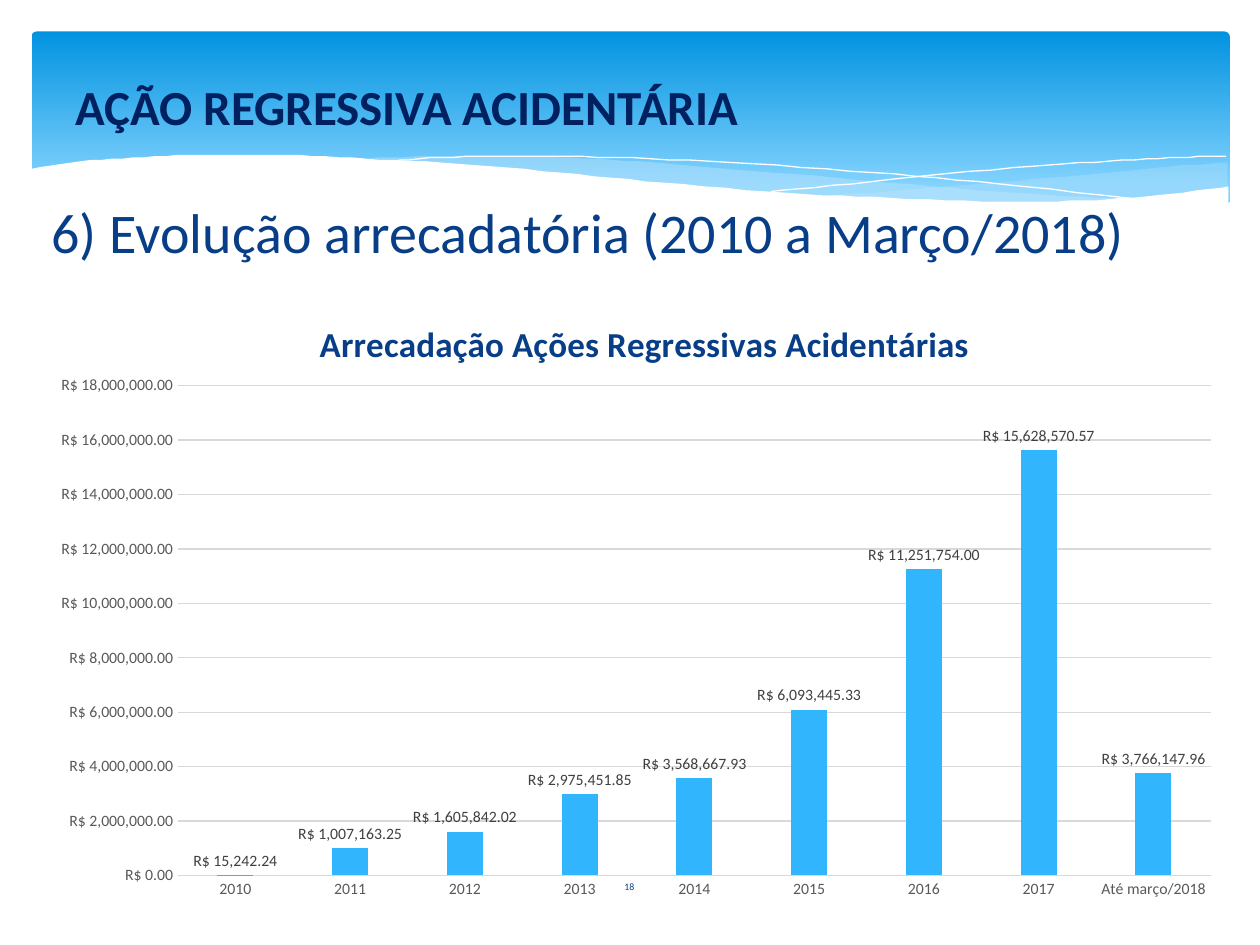
from lxml.etree import SubElement
from pptx import Presentation
from pptx.chart.data import CategoryChartData
from pptx.dml.color import RGBColor
from pptx.enum.chart import XL_CHART_TYPE, XL_LABEL_POSITION, XL_TICK_MARK
from pptx.enum.shapes import MSO_SHAPE
from pptx.enum.text import MSO_ANCHOR, PP_ALIGN
from pptx.oxml import parse_xml
from pptx.oxml.ns import nsdecls, qn
from pptx.util import Pt

PX = 9144  # 100 px to the inch
FONT = "Calibri"
WHITE = RGBColor(0xFF, 0xFF, 0xFF)
SKY_DARK = RGBColor(0x02, 0x93, 0xE0)
SKY_LIGHT = RGBColor(0x83, 0xD3, 0xFE)
MIST = RGBColor(0xC6, 0xE7, 0xFC)
NAVY = RGBColor(0x00, 0x20, 0x60)
BLUE = RGBColor(0x07, 0x3E, 0x87)
BAR = RGBColor(0x31, 0xB6, 0xFD)
GRID = RGBColor(0xD9, 0xD9, 0xD9)
AXIS_TEXT = RGBColor(0x59, 0x59, 0x59)
LABEL_TEXT = RGBColor(0x40, 0x40, 0x40)

TITLE = "AÇÃO REGRESSIVA ACIDENTÁRIA"
HEADING = "6) Evolução arrecadatória (2010 a Março/2018)"
CHART_TITLE = "Arrecadação Ações Regressivas Acidentárias"
PAGE = "18"
MONEY = '"R$"\\ #,##0.00'
REVENUE = [
    ("2010", 15242.24), ("2011", 1007163.25), ("2012", 1605842.02),
    ("2013", 2975451.85), ("2014", 3568667.93), ("2015", 6093445.33),
    ("2016", 11251754.00), ("2017", 15628570.57), ("Até março/2018", 3766147.96),
]

# Each wave is a list of curves, joined by straight edges.
RIGHT_WAVE = [
    [(974, 129), (919, 133), (859, 139), (777, 146), (704, 152), (659, 155)],
    [(659, 155), (717, 158), (779, 160), (842, 160), (895, 157), (934, 154), (974, 148)],
]
LEFT_WAVE = [
    [(891, 158), (835, 155), (740, 148), (627, 138), (553, 132), (487, 127),
     (418, 124), (342, 124), (285, 126)],
    [(285, 126), (360, 131), (448, 138), (528, 146), (616, 153), (693, 157),
     (771, 160), (836, 161), (891, 158)],
]
FALLING_LINE = [[(307, 128), (351, 125), (414, 124), (487, 125), (580, 129),
                 (693, 137), (793, 146), (905, 158)]]
RISING_LINE = [[(612, 152), (693, 144), (804, 133), (879, 128), (936, 125), (973, 124)]]
WHITE_WAVE = [
    [(975, 148), (918, 155), (861, 159), (792, 160), (706, 157), (624, 153),
     (527, 145), (445, 137), (363, 130), (291, 126), (228, 123), (159, 123),
     (105, 125), (57, 129), (21, 135)],
    [(21, 181), (975, 181)],
]


def smooth(knots, steps=6):
    """Points of a Catmull-Rom curve through the knots."""
    ends = [knots[0], *knots, knots[-1]]
    points = [knots[0]]
    for a, b, c, d in zip(ends, ends[1:], ends[2:], ends[3:]):
        for i in range(1, steps + 1):
            t = i / steps
            points.append(tuple(
                (2 * q + (r - p) * t + (2 * p - 5 * q + 4 * r - u) * t ** 2
                 + (3 * q - p - 3 * r + u) * t ** 3) / 2
                for p, q, r, u in zip(a, b, c, d)))
    return points


def add_wave(s, curves, fill=None, alpha=100, line=None):
    points = [pt for curve in curves for pt in smooth(curve)]
    builder = s.shapes.build_freeform(*points[0], scale=PX)
    builder.add_line_segments(points[1:], close=fill is not None)
    sp = builder.convert_to_shape()
    sp.shadow.inherit = False
    if fill is None:
        sp.fill.background()
    else:
        sp.fill.solid()
        sp.fill.fore_color.rgb = fill
        if alpha < 100:
            color = sp._element.spPr.find(qn("a:solidFill"))[0]
            SubElement(color, qn("a:alpha"), val=str(alpha * 1000))
    if line is None:
        sp.line.fill.background()
    else:
        sp.line.color.rgb = line
        sp.line.width = Pt(0)


def style(font, size, color, bold=False):
    font.name, font.size, font.bold = FONT, Pt(size), bold
    font.color.rgb = color


def place(sp, x, y, w, h):
    sp.left, sp.top, sp.width, sp.height = (v * PX for v in (x, y, w, h))


def write(sp, text, size, color, bold=False, align=PP_ALIGN.LEFT, anchor=MSO_ANCHOR.TOP):
    tf = sp.text_frame
    tf.word_wrap = True
    tf.vertical_anchor = anchor
    p = tf.paragraphs[0]
    p.alignment = align
    r = p.add_run()
    r.text = text
    style(r.font, size, color, bold)
    return p


def set_layout(parent, index, target="", **fractions):
    """Give a chart part a fixed place, in fractions of the chart."""
    old = parent.find(qn("c:layout"))
    if old is not None:
        parent.remove(old)
    inner = f'<c:layoutTarget val="{target}"/>' if target else ""
    inner += "".join(f'<c:{k}Mode val="edge"/>' for k in "xy")
    inner += "".join(f'<c:{k} val="{v}"/>' for k, v in fractions.items())
    parent.insert(index, parse_xml(
        f'<c:layout {nsdecls("c")}><c:manualLayout>{inner}</c:manualLayout></c:layout>'))


def add_banner(s):
    sp = s.shapes.add_shape(MSO_SHAPE.ROUNDED_RECTANGLE, 25 * PX, 25 * PX, 951 * PX, 137 * PX)
    sp.adjustments[0] = 0.03
    sp.shadow.inherit = False
    sp.line.fill.background()
    sp.fill.gradient()
    sp.fill.gradient_angle = 270
    for stop, color, position in zip(sp.fill.gradient_stops, (SKY_DARK, SKY_LIGHT), (0, 0.9)):
        stop.color.rgb = color
        stop.position = position
    add_wave(s, RIGHT_WAVE, fill=MIST, alpha=29)
    add_wave(s, LEFT_WAVE, fill=MIST, alpha=40)
    add_wave(s, FALLING_LINE, line=WHITE)
    add_wave(s, RISING_LINE, line=WHITE)
    add_wave(s, WHITE_WAVE, fill=WHITE)


def add_revenue_chart(s):
    data = CategoryChartData(number_format=MONEY)
    data.categories = [year for year, _ in REVENUE]
    data.add_series("Series 1", [value for _, value in REVENUE])
    chart = s.shapes.add_chart(XL_CHART_TYPE.COLUMN_CLUSTERED,
                               30 * PX, 223 * PX, 951 * PX, 501 * PX, data).chart
    style(chart.font, 10, RGBColor(0, 0, 0))
    chart.has_legend = False
    chart.has_title = True
    p = chart.chart_title.text_frame.paragraphs[0]
    r = p.add_run()
    r.text = CHART_TITLE
    style(r.font, 20, BLUE, bold=True)
    set_layout(chart.chart_title._element, 1, x=0.23, y=0.05)
    set_layout(chart._chartSpace.chart.plotArea, 0, "inner", x=0.117, y=0.166, w=0.862, h=0.776)

    for axis in (chart.category_axis, chart.value_axis):
        axis.major_tick_mark = axis.minor_tick_mark = XL_TICK_MARK.NONE
        style(axis.tick_labels.font, 9, AXIS_TEXT)
    values = chart.value_axis
    values.minimum_scale, values.maximum_scale, values.major_unit = 0, 18_000_000, 2_000_000
    values.tick_labels.number_format = MONEY
    values.tick_labels.number_format_is_linked = False
    values.format.line.fill.background()
    for line in (chart.category_axis.format.line, values.major_gridlines.format.line):
        line.color.rgb = GRID
        line.width = Pt(0.75)

    plot = chart.plots[0]
    plot.vary_by_categories = False
    plot.gap_width, plot.overlap = 219, -27
    fill = plot.series[0].format.fill
    fill.solid()
    fill.fore_color.rgb = BAR
    labels = plot.series[0].data_labels
    labels.show_value = True
    labels.position = XL_LABEL_POSITION.OUTSIDE_END
    labels.number_format = MONEY
    labels.number_format_is_linked = False
    style(labels.font, 9, LABEL_TEXT)


def main():
    prs = Presentation()
    prs.slide_width, prs.slide_height = 1000 * PX, 750 * PX
    s = prs.slides.add_slide(prs.slide_layouts[5])
    add_banner(s)

    heading = s.shapes.add_textbox(20 * PX, 158 * PX, 961 * PX, 566 * PX)
    p = write(heading, HEADING, 32, BLUE, align=PP_ALIGN.JUSTIFY)
    p.line_spacing = 0.9
    p.space_before = Pt(4.6)
    p._p.get_or_add_pPr().set("marL", str(11 * PX))

    page = s.shapes.add_textbox(436 * PX, 684 * PX, 127 * PX, 40 * PX)
    write(page, PAGE, 5.6, BLUE, align=PP_ALIGN.CENTER, anchor=MSO_ANCHOR.MIDDLE)

    title = s.shapes.title
    place(title, 50, 37, 900, 94)
    write(title, TITLE, 28, NAVY, bold=True, anchor=MSO_ANCHOR.MIDDLE)
    s.shapes._spTree.append(title._element)  # in front of the banner

    add_revenue_chart(s)
    prs.save("out.pptx")


if __name__ == "__main__":
    main()
